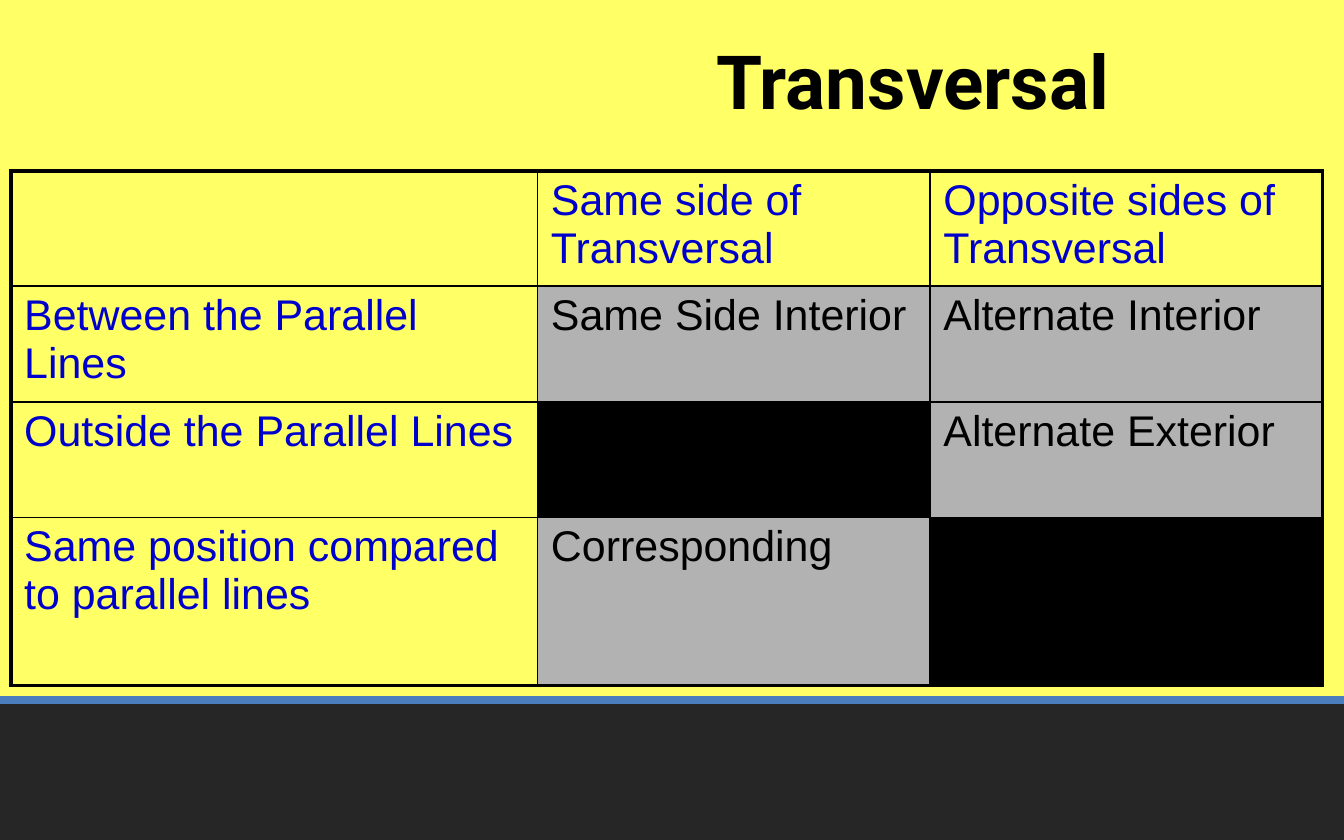
from dataclasses import dataclass

from lxml.etree import SubElement
from pptx import Presentation
from pptx.dml.color import RGBColor
from pptx.enum.shapes import MSO_CONNECTOR, MSO_SHAPE
from pptx.enum.text import MSO_ANCHOR, PP_ALIGN
from pptx.oxml import parse_xml
from pptx.oxml.ns import nsdecls, qn
from pptx.util import Inches, Pt


@dataclass(frozen=True)
class Theme:
    background: str = "FFFF66"
    footer: str = "262626"
    rule: str = "4B7EBC"
    ink: str = "000000"
    heading: str = "0000CC"
    answer: str = "B2B2B2"
    title_font: str = "Roboto"
    body_font: str = "Arial"
    title_size: int = 40
    body_size: int = 23
    rule_width: float = 4
    outer_border: float = 2.25
    inner_border: float = 1


THEME = Theme()
SLIDE_WIDTH, SLIDE_HEIGHT, FOOTER_TOP = 10, 6.25, 5.21
COLUMN_WIDTHS = (3.92, 2.92, 2.92)
ROW_HEIGHTS = (0.86, 0.86, 0.86, 1.25)
ANGLE_PAIRS = (
    ("", "Same side of Transversal", "Opposite sides of Transversal"),
    ("Between the Parallel Lines", "Same Side Interior", "Alternate Interior"),
    ("Outside the Parallel Lines", "", "Alternate Exterior"),
    ("Same position compared to parallel lines", "Corresponding", ""),
)


def write_text(frame, text, *, font, size, color, bold=False, align=PP_ALIGN.LEFT):
    frame.word_wrap = True
    paragraph = frame.paragraphs[0]
    paragraph.alignment = align
    run = paragraph.add_run()
    run.text = text
    run.font.name = font
    run.font.size = Pt(size)
    run.font.bold = bold
    run.font.color.rgb = RGBColor.from_string(color)


def fill_solid(fill, color):
    fill.solid()
    fill.fore_color.rgb = RGBColor.from_string(color)


def add_footer(slide):
    band = slide.shapes.add_shape(
        MSO_SHAPE.RECTANGLE, 0, Inches(FOOTER_TOP),
        Inches(SLIDE_WIDTH), Inches(SLIDE_HEIGHT - FOOTER_TOP))
    band.shadow.inherit = False
    fill_solid(band.fill, THEME.footer)
    band.line.fill.background()
    rule = slide.shapes.add_connector(
        MSO_CONNECTOR.STRAIGHT, 0, Inches(FOOTER_TOP),
        Inches(SLIDE_WIDTH), Inches(FOOTER_TOP))
    rule.line.color.rgb = RGBColor.from_string(THEME.rule)
    rule.line.width = Pt(THEME.rule_width)
    SubElement(rule.element.spPr, qn("a:effectLst"))


def place_title(slide, text):
    title = slide.shapes.title
    title.left, title.top = Inches(4.58), Inches(0.21)
    title.width, title.height = Inches(4.42), Inches(0.77)
    title.text_frame.vertical_anchor = MSO_ANCHOR.MIDDLE
    write_text(title.text_frame, text, font=THEME.title_font, size=THEME.title_size,
               color=THEME.ink, bold=True, align=PP_ALIGN.CENTER)


def set_borders(cell, outer_sides):
    properties = cell._tc.get_or_add_tcPr()
    for position, side in enumerate("LRTB"):
        width = THEME.outer_border if side in outer_sides else THEME.inner_border
        properties.insert(position, parse_xml(
            f'<a:ln{side} {nsdecls("a")} w="{Pt(width)}"><a:solidFill>'
            f'<a:srgbClr val="{THEME.ink}"/></a:solidFill></a:ln{side}>'))


def format_cell(cell, text, is_heading, outer_sides):
    cell.margin_left = cell.margin_right = Inches(0.1)
    cell.margin_top = cell.margin_bottom = Inches(0.04)
    if is_heading:
        cell.fill.background()
    else:
        fill_solid(cell.fill, THEME.answer if text else THEME.ink)
    set_borders(cell, outer_sides)
    if text:
        write_text(cell.text_frame, text, font=THEME.body_font, size=THEME.body_size,
                   color=THEME.heading if is_heading else THEME.ink)


def add_angle_table(slide):
    last_row, last_column = len(ROW_HEIGHTS) - 1, len(COLUMN_WIDTHS) - 1
    table = slide.shapes.add_table(
        len(ROW_HEIGHTS), len(COLUMN_WIDTHS), Inches(0.08), Inches(1.27),
        Inches(sum(COLUMN_WIDTHS)), Inches(sum(ROW_HEIGHTS))).table
    table.first_row = table.horz_banding = False
    for column, width in zip(table.columns, COLUMN_WIDTHS):
        column.width = Inches(width)
    for row, height in zip(table.rows, ROW_HEIGHTS):
        row.height = Inches(height)
    for row_index, texts in enumerate(ANGLE_PAIRS):
        for column_index, text in enumerate(texts):
            edges = {"L": column_index == 0, "R": column_index == last_column,
                     "T": row_index == 0, "B": row_index == last_row}
            outer_sides = [side for side, is_outer in edges.items() if is_outer]
            is_heading = row_index == 0 or column_index == 0
            format_cell(table.cell(row_index, column_index), text, is_heading, outer_sides)


def main():
    presentation = Presentation()
    presentation.slide_width = Inches(SLIDE_WIDTH)
    presentation.slide_height = Inches(SLIDE_HEIGHT)
    slide = presentation.slides.add_slide(presentation.slide_layouts.get_by_name("Title Only"))
    fill_solid(slide.background.fill, THEME.background)
    add_footer(slide)
    add_angle_table(slide)
    place_title(slide, "Transversal")
    presentation.save("out.pptx")


if __name__ == "__main__":
    main()
